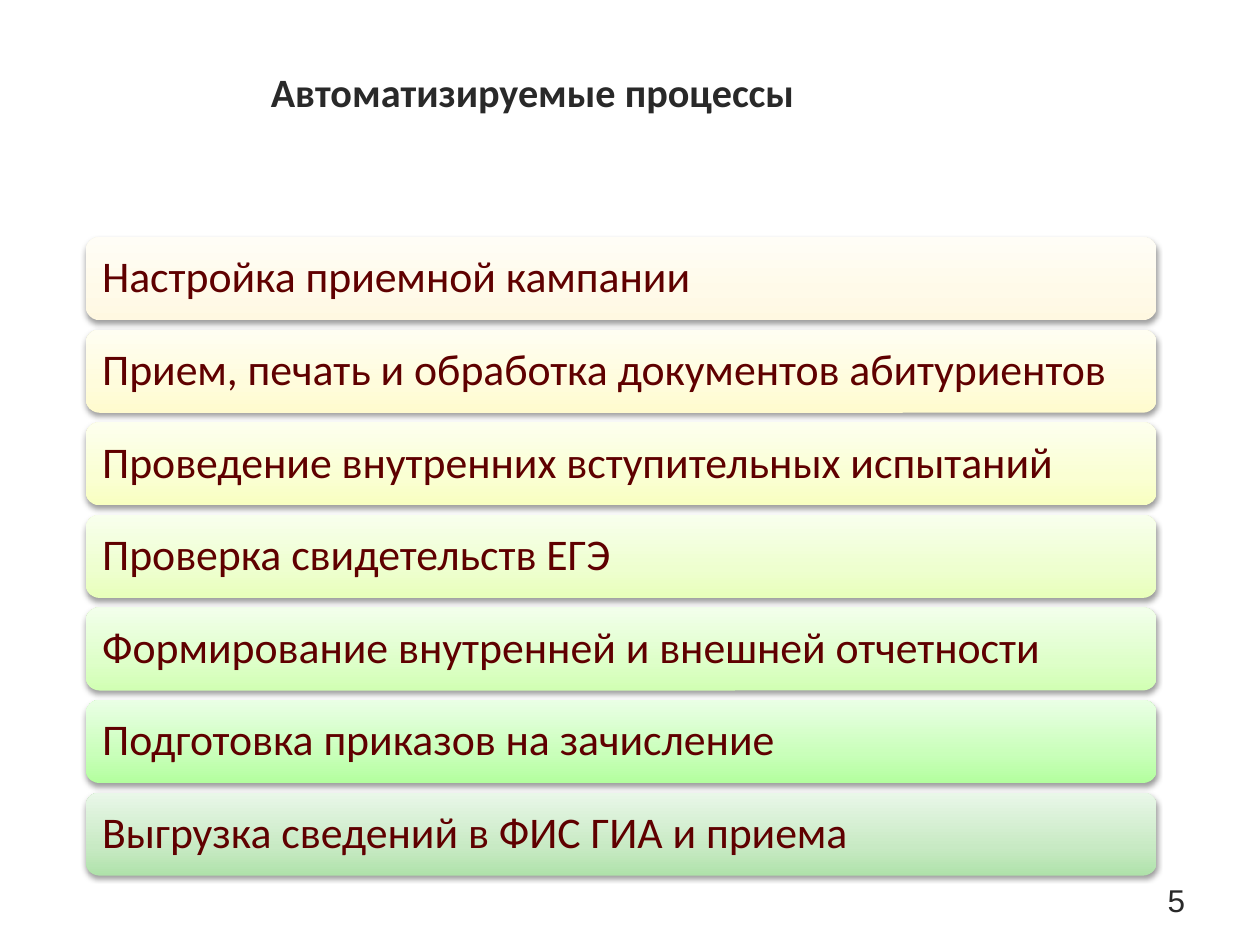
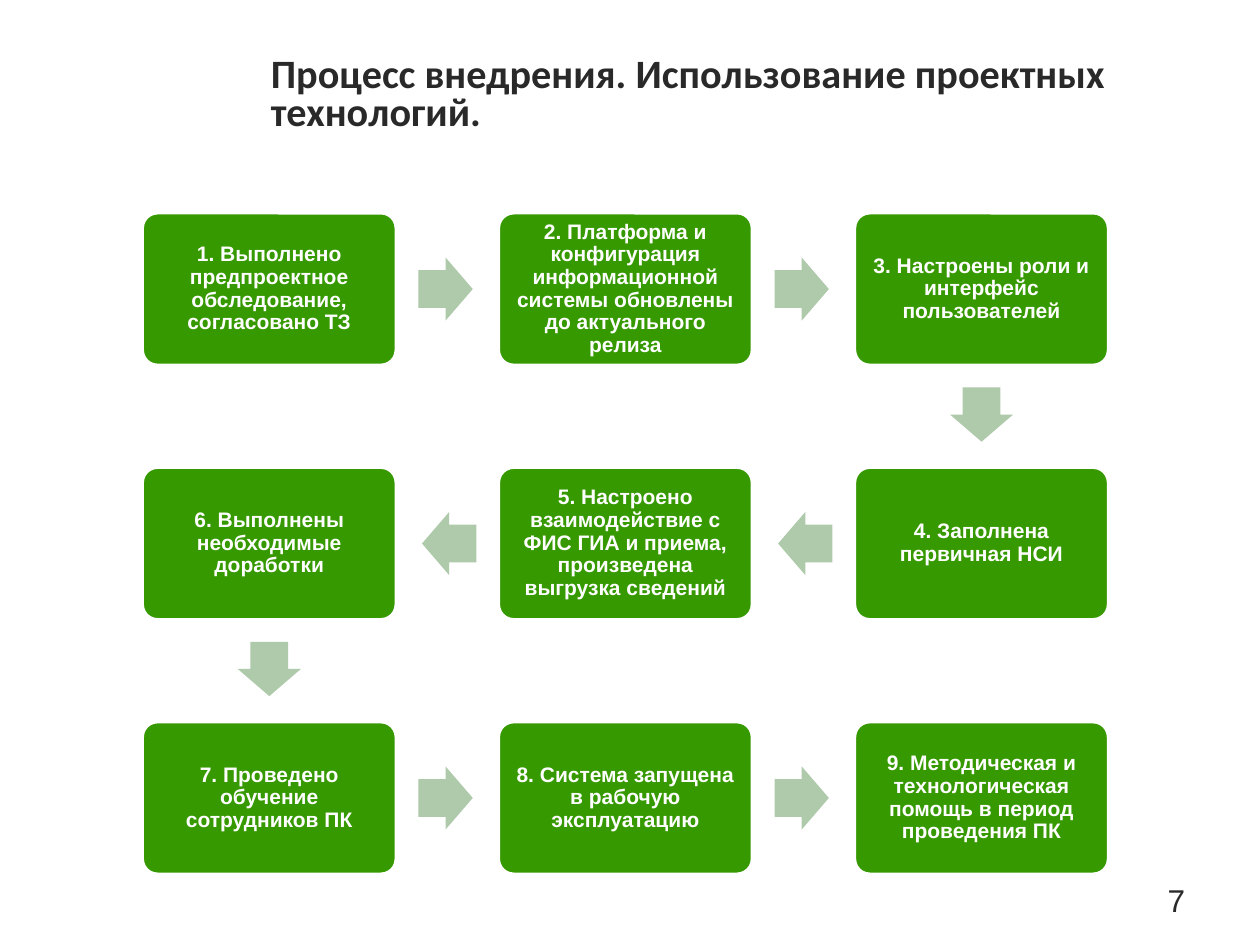
"""Builds two slides: the automated admission processes and the rollout workflow."""
from copy import deepcopy
from dataclasses import dataclass

from lxml.etree import SubElement
from pptx import Presentation
from pptx.dml.color import RGBColor
from pptx.enum.shapes import MSO_SHAPE as Shape
from pptx.enum.text import MSO_ANCHOR as Anchor, MSO_AUTO_SIZE as AutoSize, PP_ALIGN as Align
from pptx.oxml.ns import qn
from pptx.util import Pt


@dataclass(frozen=True)
class Theme:
    heading_font: str = "Calibri"
    body_font: str = "Arial"
    dark: str = "292929"
    maroon: str = "5F0000"
    white: str = "FFFFFF"
    green: str = "369900"
    pale_green: str = "AECAAB"
    title_size: int = 23
    process_size: int = 25
    step_size: int = 12
    number_size: int = 18


theme = Theme()
rgb = RGBColor.from_string


def write_text(text_frame, text, font_name, size, color, bold=False,
               align=Align.LEFT, anchor=Anchor.MIDDLE, spacing=1.0, margin=None):
    text_frame.word_wrap = True
    text_frame.auto_size = AutoSize.NONE
    text_frame.vertical_anchor = anchor
    if margin is not None:
        text_frame.margin_left = text_frame.margin_right = Pt(margin)
        text_frame.margin_top = text_frame.margin_bottom = Pt(margin)
    paragraph = text_frame.paragraphs[0]
    paragraph.alignment = align
    paragraph.line_spacing = spacing
    paragraph.space_before = Pt(0)
    run = paragraph.add_run()
    run.text = text
    run.font.name = font_name
    run.font.size = Pt(size)
    run.font.bold = bold
    run.font.color.rgb = rgb(color)


def add_titled_slide(presentation, title, number):
    slide = presentation.slides.add_slide(presentation.slide_layouts[5])
    heading = slide.shapes.title
    heading.left, heading.top, heading.width, heading.height = Pt(147.6), Pt(12.2), Pt(550), Pt(85)
    write_text(heading.text_frame, title, theme.heading_font, theme.title_size,
               theme.dark, bold=True, spacing=0.8)
    number_box = slide.shapes.add_textbox(Pt(660.2), Pt(499.7), Pt(44.6), Pt(28.8))
    write_text(number_box.text_frame, number, theme.body_font, theme.number_size,
               theme.dark, anchor=Anchor.TOP)
    return slide


presentation = Presentation()
presentation.slide_width, presentation.slide_height = Pt(720), Pt(540)

processes = [
    ("Настройка приемной кампании", ("FFF8E1", "FFFAE9", "FFFDF6")),
    ("Прием, печать и обработка документов абитуриентов", ("FFFBCE", "FFFCDC", "FFFEF2")),
    ("Проведение внутренних вступительных испытаний", ("F8FFC1", "FAFFD3", "FDFFEE")),
    ("Проверка свидетельств ЕГЭ", ("E8FFBB", "EEFFCF", "F8FFED")),
    ("Формирование внутренней и внешней отчетности", ("D1FFB3", "DEFFC9", "F2FFEB")),
    ("Подготовка приказов на зачисление", ("B3FF9E", "C9FFBA", "EAFFE5")),
    ("Выгрузка сведений в ФИС ГИА и приема", ("AFE2AA", "C8EAC4", "E9F7E8")),
]
slide = add_titled_slide(presentation, "Автоматизируемые процессы", "5")
for index, (process, colors) in enumerate(processes):
    bar = slide.shapes.add_shape(Shape.ROUNDED_RECTANGLE, Pt(49), Pt(135.5 + 52.9 * index),
                                 Pt(612), Pt(47.5))
    bar.fill.gradient()
    bar.fill.gradient_angle = 90
    properties = bar._element.spPr
    stop_list = properties.find(".//" + qn("a:gsLst"))
    stop_list.insert(1, deepcopy(stop_list[0]))
    for stop, position, color in zip(bar.fill.gradient_stops, (0, 0.35, 1), colors):
        stop.position = position
        stop.color.rgb = rgb(color)
    bar.line.fill.background()
    bar.shadow.inherit = False
    shadow = SubElement(properties.find(qn("a:effectLst")), qn("a:outerShdw"),
                        blurRad=str(Pt(3.1)), dist=str(Pt(1.6)), dir="5400000", rotWithShape="0")
    shadow_color = SubElement(shadow, qn("a:srgbClr"), val="000000")
    SubElement(shadow_color, qn("a:alpha"), val="38000")
    write_text(bar.text_frame, process, theme.heading_font, theme.process_size,
               theme.maroon, spacing=0.9, margin=7.2)

steps = [
    "1. Выполнено предпроектное обследование, согласовано ТЗ",
    "2. Платформа и конфигурация информационной системы обновлены до актуального релиза",
    "3. Настроены роли и интерфейс пользователей",
    "4. Заполнена первичная НСИ",
    "5. Настроено взаимодействие с ФИС ГИА и приема, произведена выгрузка сведений",
    "6. Выполнены необходимые доработки",
    "7. Проведено обучение сотрудников ПК",
    "8. Система запущена в рабочую эксплуатацию",
    "9. Методическая и технологическая помощь в период проведения ПК",
]
columns = 3
step_width, step_height = 145.2, 87.2
column_pitch, row_pitch = 203.5, 145.4
arrow_length, arrow_width = 31, 36
arrow_shift = 1
rotations = {(1, 0): 0, (0, 1): 90, (-1, 0): 180}

cells = []
for index in range(len(steps)):
    row, column = divmod(index, columns)
    cells.append((columns - 1 - column if row % 2 else column, row))
centers = [(153.9 + column_pitch * column, 165.2 + row_pitch * row) for column, row in cells]

slide = add_titled_slide(
    presentation, "Процесс внедрения. Использование проектных технологий.", "7")
for index, (step, (x, y)) in enumerate(zip(steps, centers)):
    box = slide.shapes.add_shape(Shape.ROUNDED_RECTANGLE, Pt(x - step_width / 2),
                                 Pt(y - step_height / 2), Pt(step_width), Pt(step_height))
    box.adjustments[0] = 0.1
    box.fill.solid()
    box.fill.fore_color.rgb = rgb(theme.green)
    box.line.color.rgb = rgb(theme.white)
    box.line.width = Pt(2)
    box.shadow.inherit = False
    write_text(box.text_frame, step, theme.body_font, theme.step_size, theme.white,
               bold=True, align=Align.CENTER, spacing=0.9, margin=3.6)
    if index + 1 == len(steps):
        continue
    next_x, next_y = centers[index + 1]
    direction = (cells[index + 1][0] - cells[index][0], cells[index + 1][1] - cells[index][1])
    arrow_x = (x + next_x) / 2 - arrow_shift * direction[0]
    arrow_y = (y + next_y) / 2 - arrow_shift * direction[1]
    arrow = slide.shapes.add_shape(Shape.RIGHT_ARROW, Pt(arrow_x - arrow_length / 2),
                                   Pt(arrow_y - arrow_width / 2), Pt(arrow_length), Pt(arrow_width))
    arrow.adjustments[0], arrow.adjustments[1] = 0.6, 0.5
    arrow.rotation = rotations[direction]
    arrow.fill.solid()
    arrow.fill.fore_color.rgb = rgb(theme.pale_green)
    arrow.line.fill.background()
    arrow.shadow.inherit = False

presentation.save("out.pptx")
